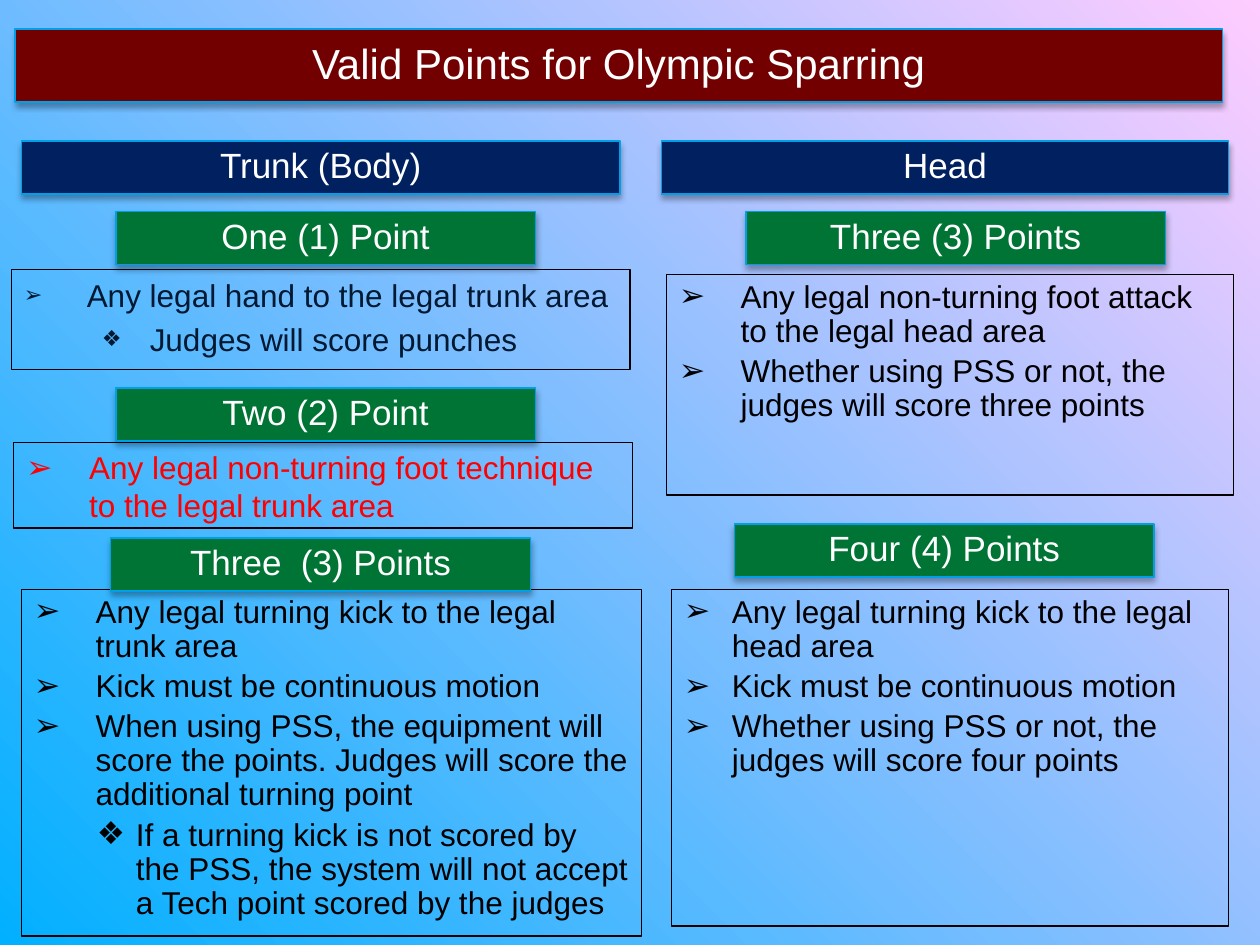
from lxml import etree
from pptx import Presentation
from pptx import util as u
from pptx.dml.color import RGBColor
from pptx.enum import shapes, text
from pptx.oxml import parse_xml
from pptx.oxml.ns import nsdecls, qn

SKY = RGBColor(0x01, 0xB0, 0xFF)
PINK = RGBColor(0xFF, 0xCC, 0xFF)
MAROON = RGBColor(0x72, 0x00, 0x00)
NAVY = RGBColor(0x00, 0x20, 0x60)
GREEN = RGBColor(0x00, 0x74, 0x34)
EDGE = RGBColor(0x01, 0x9F, 0xE7)
WHITE = RGBColor(0xFF, 0xFF, 0xFF)
BLACK = RGBColor(0x00, 0x00, 0x00)
INK = RGBColor(0x00, 0x19, 0x32)
RED = RGBColor(0xFF, 0x00, 0x00)
FONT = "Arial"
MARKS = ("➢", "❖")


def paint(slide):
    """Fill the background from lower left to upper right."""
    fill = slide.background.fill
    fill.gradient()
    fill.gradient_angle = 45
    for stop, color in zip(fill.gradient_stops, (SKY, PINK)):
        stop.color.rgb = color


def rect(slide, at, line):
    shape = slide.shapes.add_shape(
        shapes.MSO_SHAPE.RECTANGLE, *(u.Inches(n) for n in at))
    shape.shadow.inherit = False
    shape.line.color.rgb = line
    shape.line.width = u.Pt(0.75)
    shape.text_frame.word_wrap = True
    return shape


def style(para, size, color):
    for run in para.runs:
        run.font.name = FONT
        run.font.size = u.Pt(size)
        run.font.color.rgb = color


def shade(shape):
    """Give a soft shadow straight below the shape."""
    effects = shape._element.spPr.find(qn("a:effectLst"))
    effects.append(parse_xml(
        f'<a:outerShdw {nsdecls("a")} blurRad="{u.Pt(3.5)}" dist="{u.Pt(2.2)}" '
        'dir="5400000" rotWithShape="0"><a:srgbClr val="000000">'
        '<a:alpha val="32000"/></a:srgbClr></a:outerShdw>'))


def banner(slide, at, words, fill, size=20):
    shape = rect(slide, at, EDGE)
    shape.fill.solid()
    shape.fill.fore_color.rgb = fill
    shade(shape)
    frame = shape.text_frame
    frame.vertical_anchor = text.MSO_ANCHOR.MIDDLE
    frame.text = words
    para = frame.paragraphs[0]
    para.alignment = text.PP_ALIGN.CENTER
    para.line_spacing = 0.9
    style(para, size, WHITE)


def bullet(para, mark, left, hang, color, scale):
    props = para._p.get_or_add_pPr()
    props.set("marL", str(u.Inches(left)))
    props.set("indent", str(-u.Inches(hang)))
    tint = etree.SubElement(props, qn("a:buClr"))
    etree.SubElement(tint, qn("a:srgbClr"), val=str(color))
    etree.SubElement(props, qn("a:buSzPct"), val=str(scale * 1000))
    etree.SubElement(props, qn("a:buFont"), typeface=FONT)
    etree.SubElement(props, qn("a:buChar"), char=mark)


def rules(slide, at, items, indents, color=BLACK, spacing=0.9, scale=100):
    """Box of bulleted (level, words) items; indents holds (left, hang) by level."""
    shape = rect(slide, at, BLACK)
    shape.fill.background()
    frame = shape.text_frame
    frame.vertical_anchor = text.MSO_ANCHOR.TOP
    frame.text = "\n".join(words for _, words in items)
    for i, (para, (level, _)) in enumerate(zip(frame.paragraphs, items)):
        para.level = level
        para.alignment = text.PP_ALIGN.LEFT
        para.line_spacing = spacing
        if i:
            para.space_before = u.Pt(3.6)
        bullet(para, MARKS[level], *indents[level], color, scale)
        style(para, 18, color)


def main():
    deck = Presentation()
    deck.slide_width, deck.slide_height = u.Inches(10), u.Inches(7.5)
    slide = deck.slides.add_slide(deck.slide_layouts[6])
    paint(slide)

    rules(slide, (0.09, 2.14, 4.91, 0.79), [
        (0, "Any legal hand to the legal trunk area"),
        (1, "Judges will score punches"),
    ], [(0.5, 0.5), (1, 0.38)], INK, 1.0, 70)
    rules(slide, (0.11, 3.51, 4.91, 0.68), [
        (0, "Any legal non-turning foot technique to the legal trunk area"),
    ], [(0.5, 0.5)], RED, 1.0)
    rules(slide, (0.17, 4.68, 4.92, 2.75), [
        (0, "Any legal turning kick to the legal trunk area"),
        (0, "Kick must be continuous motion"),
        (0, "When using PSS, the equipment will score the points. "
            "Judges will score the additional turning point"),
        (1, "If a turning kick is not scored by the PSS, the system "
            "will not accept a Tech point scored by the judges"),
    ], [(0.49, 0.49), (0.81, 0.31)])
    rules(slide, (5.29, 2.18, 4.5, 1.75), [
        (0, "Any legal non-turning foot attack to the legal head area"),
        (0, "Whether using PSS or not, the judges will score three points"),
    ], [(0.49, 0.49)])
    rules(slide, (5.33, 4.68, 4.42, 2.67), [
        (0, "Any legal turning kick to the legal head area"),
        (0, "Kick must be continuous motion"),
        (0, "Whether using PSS or not, the judges will score four points"),
    ], [(0.38, 0.38)])

    banner(slide, (0.12, 0.23, 9.58, 0.58),
           "Valid Points for Olympic Sparring", MAROON, 24)
    for left, width, words in ((0.17, 4.75, "Trunk (Body)"), (5.25, 4.5, "Head")):
        banner(slide, (left, 1.12, width, 0.42), words, NAVY)
    for left, top, words in (
        (0.92, 1.68, "One (1) Point"),
        (0.92, 3.08, "Two (2) Point"),
        (0.88, 4.27, "Three  (3) Points"),
        (5.92, 1.68, "Three (3) Points"),
        (5.83, 4.16, "Four (4) Points"),
    ):
        banner(slide, (left, top, 3.33, 0.42), words, GREEN)

    deck.save("out.pptx")


if __name__ == "__main__":
    main()
